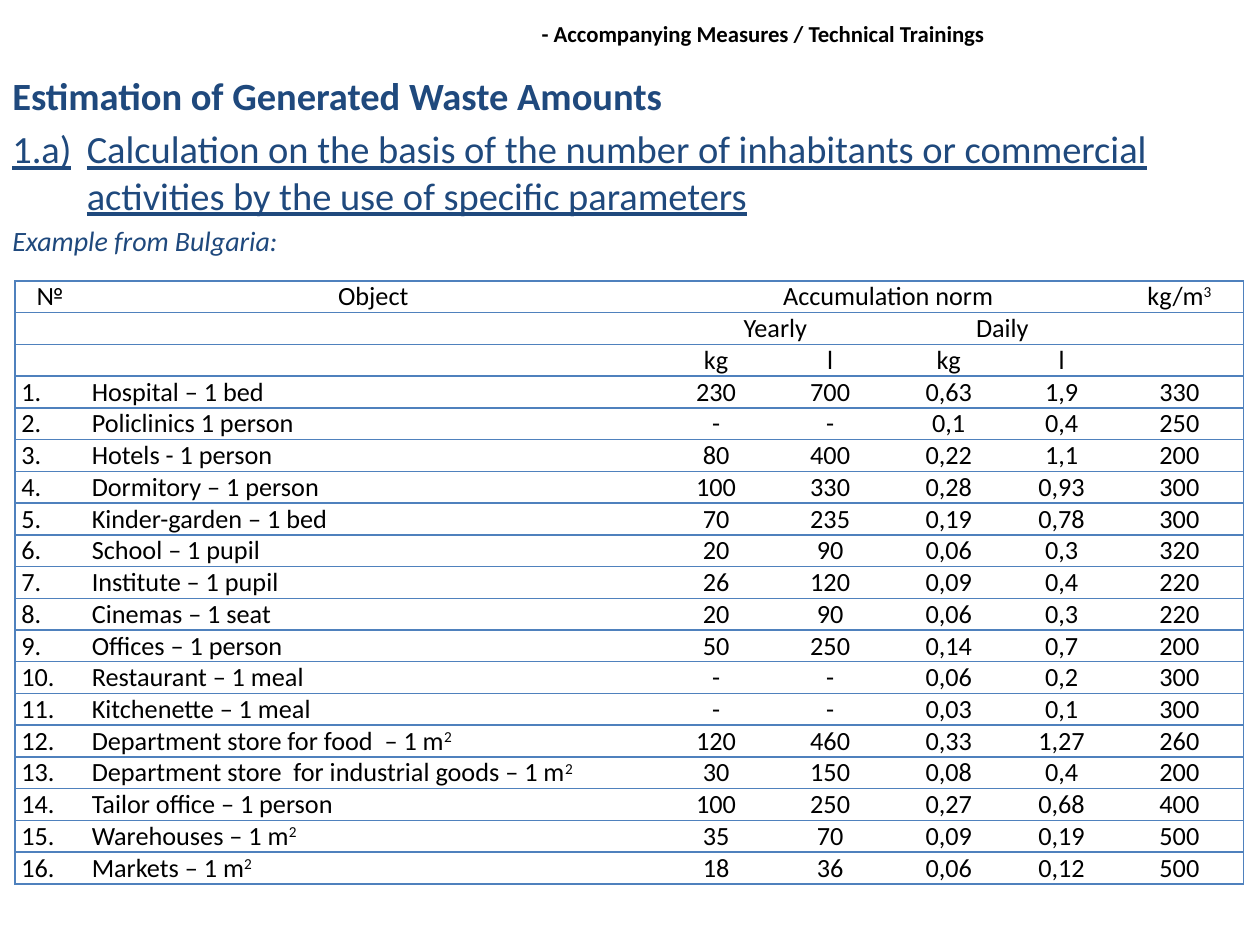
from lxml.etree import SubElement
from pptx import Presentation
from pptx.dml.color import RGBColor
from pptx.enum.shapes import MSO_SHAPE
from pptx.enum.text import MSO_ANCHOR, PP_ALIGN
from pptx.oxml.ns import qn
from pptx.util import Cm, Pt

FONT = "Calibri"
BLACK, WHITE, NAVY, BLUE = "000000", "FFFFFF", "1F497D", "4F81BD"
NO_STYLE = "{2D5ABB26-0587-4C30-8999-92F81FD0307C}"

BANNER = "- Accompanying Measures / Technical Trainings"
HEADINGS = [
    ("Estimation of Generated Waste Amounts", 22, {"bold": True}),
    ("1.a)\tCalculation on the basis of the number of inhabitants or commercial "
     "activities by the use of specific parameters", 22, {"underline": True}),
    ("Example from Bulgaria:", 16, {"italic": True}),
]
HEADER_ROWS = [
    ("№", "Object", "Accumulation norm", "", "", "", "kg/m^3"),
    ("", "", "Yearly", "", "Daily", "", ""),
    ("", "", "kg", "l", "kg", "l", ""),
]
MERGES = [(0, 2, 5), (1, 2, 3), (1, 4, 5)]
NORMS = [
    ("Hospital – 1 bed", "230", "700", "0,63", "1,9", "330"),
    ("Policlinics 1 person", "-", "-", "0,1", "0,4", "250"),
    ("Hotels - 1 person", "80", "400", "0,22", "1,1", "200"),
    ("Dormitory – 1 person", "100", "330", "0,28", "0,93", "300"),
    ("Kinder-garden – 1 bed", "70", "235", "0,19", "0,78", "300"),
    ("School – 1 pupil", "20", "90", "0,06", "0,3", "320"),
    ("Institute – 1 pupil", "26", "120", "0,09", "0,4", "220"),
    ("Cinemas – 1 seat", "20", "90", "0,06", "0,3", "220"),
    ("Offices – 1 person", "50", "250", "0,14", "0,7", "200"),
    ("Restaurant – 1 meal", "-", "-", "0,06", "0,2", "300"),
    ("Kitchenette – 1 meal", "-", "-", "0,03", "0,1", "300"),
    ("Department store for food  – 1 m^2", "120", "460", "0,33", "1,27", "260"),
    ("Department store  for industrial goods – 1 m^2", "30", "150", "0,08", "0,4", "200"),
    ("Tailor office – 1 person", "100", "250", "0,27", "0,68", "400"),
    ("Warehouses – 1 m^2", "35", "70", "0,09", "0,19", "500"),
    ("Markets – 1 m^2", "18", "36", "0,06", "0,12", "500"),
]
COLUMN_WIDTHS = [1.42, 11.61, 2.21, 2.39, 2.39, 2.16, 2.59]
ROW_HEIGHT = 0.64
CELL_SIZE = 15


def color(value):
    return RGBColor.from_string(value)


def format_run(run, size, shade, **styles):
    run.font.name = FONT
    run.font.size = Pt(size)
    run.font.color.rgb = color(shade)
    for name, value in styles.items():
        setattr(run.font, name, value)


def add_banner(slide):
    shape = slide.shapes.add_shape(
        MSO_SHAPE.RECTANGLE, Cm(10.72), Cm(0.28), Cm(10.11), Cm(0.79))
    shape.shadow.inherit = False
    shape.fill.solid()
    shape.fill.fore_color.rgb = color(WHITE)
    shape.line.fill.background()
    frame = shape.text_frame
    frame.margin_left = Cm(0.2)
    frame.margin_right = frame.margin_top = frame.margin_bottom = Cm(0.1)
    frame.text = BANNER
    frame.paragraphs[0].alignment = PP_ALIGN.LEFT
    format_run(frame.paragraphs[0].runs[0], 13, BLACK, bold=True)


def add_headings(slide):
    frame = slide.shapes.add_textbox(Cm(0), Cm(1.32), Cm(25.4), Cm(4.2)).text_frame
    frame.word_wrap = True
    for index, (text, size, styles) in enumerate(HEADINGS):
        paragraph = frame.add_paragraph() if index else frame.paragraphs[0]
        paragraph.text = text
        if index:
            paragraph.space_before = Pt(size * 0.2)
        if "\t" in text:
            properties = paragraph._p.get_or_add_pPr()
            properties.set("marL", str(Cm(1.5)))
            properties.set("indent", str(-Cm(1.5)))
        for run in paragraph.runs:
            format_run(run, size, NAVY, **styles)


def add_border(cell, side):
    line = SubElement(cell._tc.get_or_add_tcPr(), qn(f"a:ln{side}"), w=str(Pt(1)))
    fill = SubElement(line, qn("a:solidFill"))
    SubElement(fill, qn("a:srgbClr"), val=BLUE)


def fill_cell(cell, text, alignment, sides):
    cell.margin_left = cell.margin_right = Cm(0.13)
    cell.margin_top = cell.margin_bottom = 0
    cell.vertical_anchor = MSO_ANCHOR.TOP
    for side in sides:
        add_border(cell, side)
    cell.fill.solid()
    cell.fill.fore_color.rgb = color(WHITE)
    paragraph = cell.text_frame.paragraphs[0]
    paragraph.alignment = alignment
    base, _, exponent = text.partition("^")
    for part in filter(None, (base, exponent)):
        run = paragraph.add_run()
        run.text = part
        format_run(run, CELL_SIZE, BLACK)
    if exponent:
        run._r.get_or_add_rPr().set("baseline", "30000")
    if not text:
        SubElement(paragraph._p, qn("a:endParaRPr"), sz=str(CELL_SIZE * 100))


def add_norm_table(slide):
    rows = HEADER_ROWS + [(f"{number}.", *norm) for number, norm in enumerate(NORMS, 1)]
    last = len(COLUMN_WIDTHS) - 1
    frame = slide.shapes.add_table(
        len(rows), last + 1, Cm(0.3), Cm(5.66),
        Cm(sum(COLUMN_WIDTHS)), Cm(ROW_HEIGHT * len(rows)))
    frame._element.find(".//" + qn("a:tableStyleId")).text = NO_STYLE
    table = frame.table
    table.first_row = table.horz_banding = False
    for column, width in zip(table.columns, COLUMN_WIDTHS):
        column.width = Cm(width)
    for row_index, row in enumerate(rows):
        table.rows[row_index].height = Cm(ROW_HEIGHT)
        for column_index, text in enumerate(row):
            is_label = row_index >= len(HEADER_ROWS) and column_index < 2
            alignment = PP_ALIGN.LEFT if is_label else PP_ALIGN.CENTER
            sides = {0: "LTB", last: "RTB"}.get(column_index, "TB")
            fill_cell(table.cell(row_index, column_index), text, alignment, sides)
    for row_index, first, final in MERGES:
        table.cell(row_index, first).merge(table.cell(row_index, final))


def main():
    presentation = Presentation()
    presentation.slide_width = Cm(25.4)
    presentation.slide_height = Cm(19.05)
    slide = presentation.slides.add_slide(presentation.slide_layouts[6])
    add_banner(slide)
    add_headings(slide)
    add_norm_table(slide)
    presentation.save("out.pptx")


if __name__ == "__main__":
    main()
